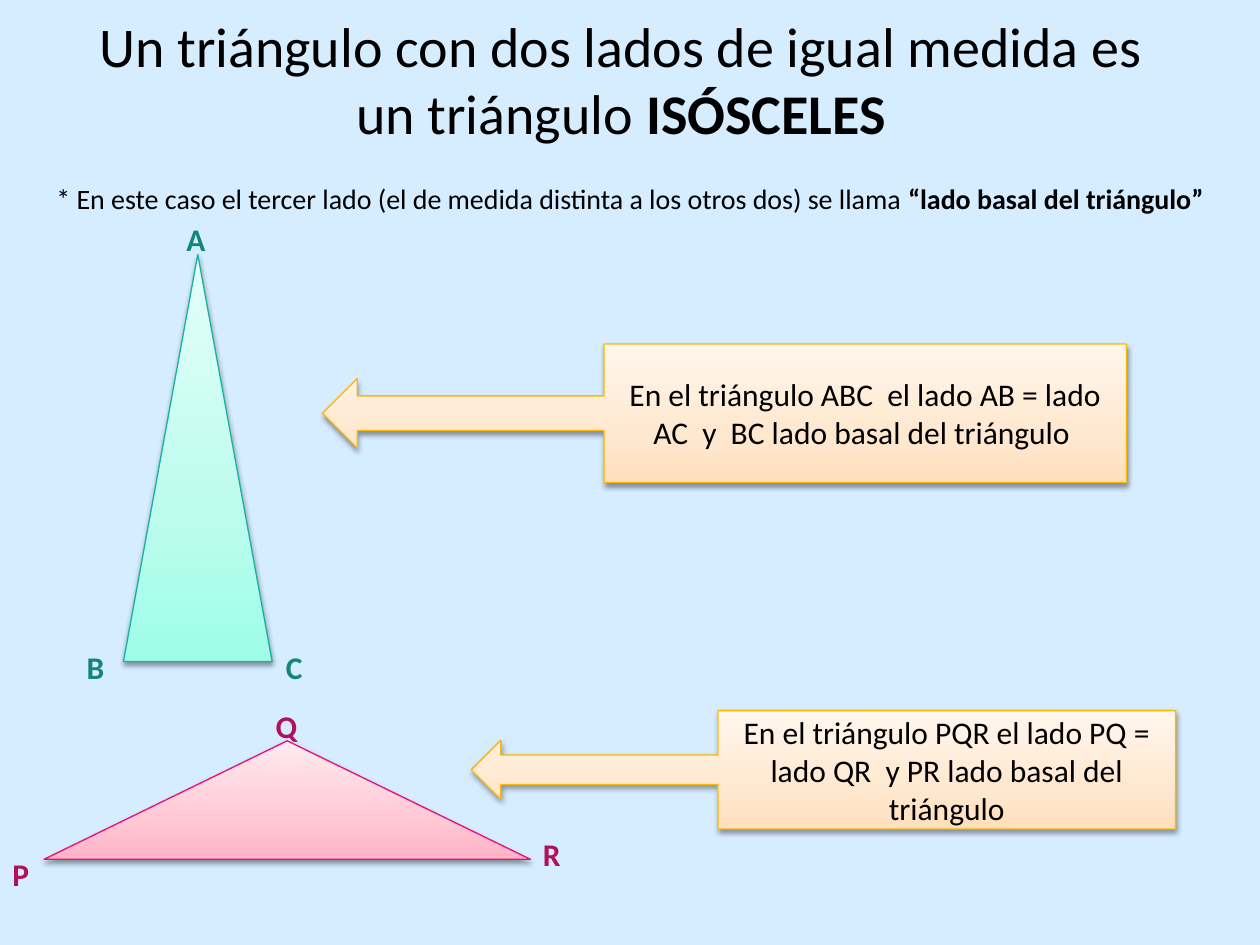
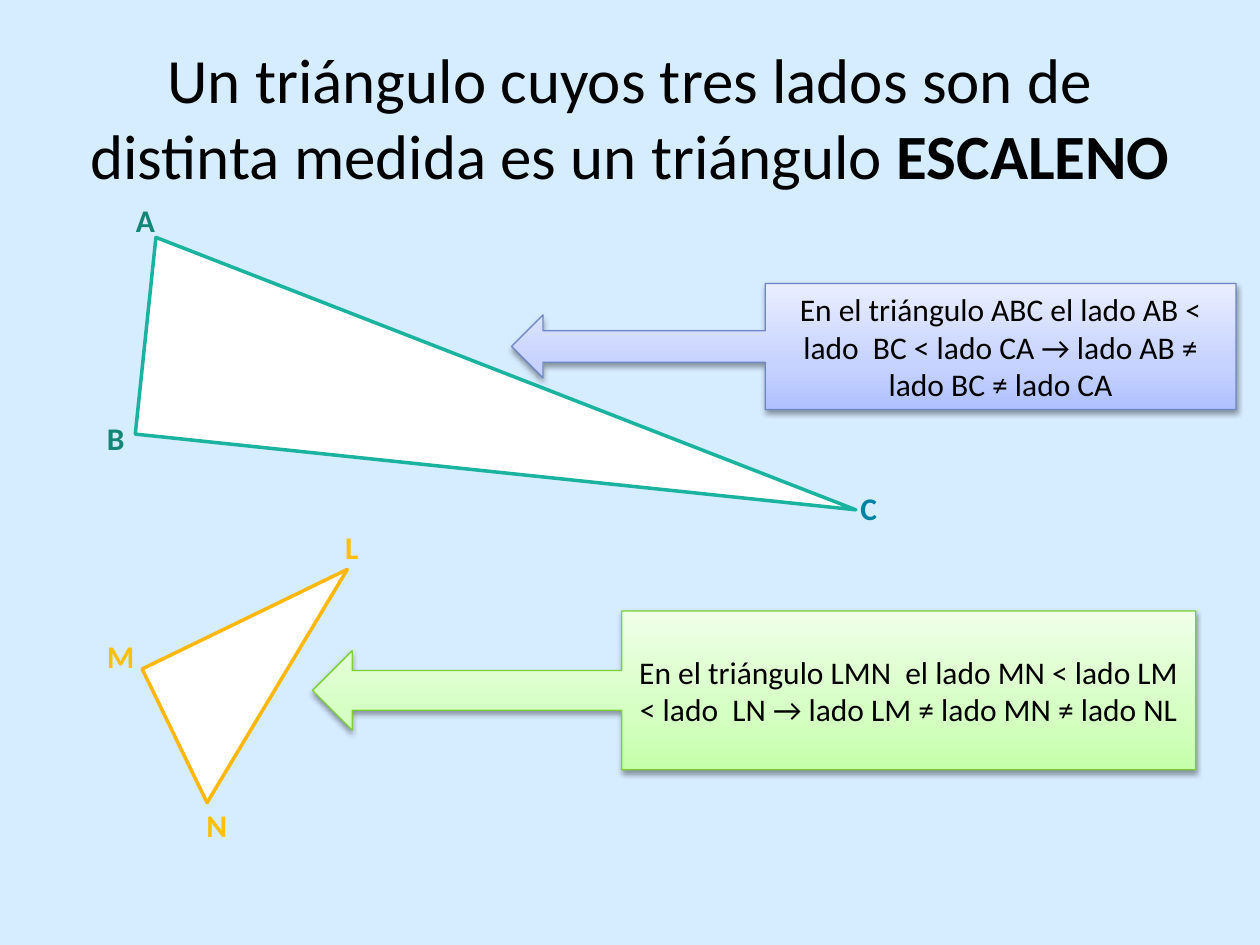
import pptx
import pptx.util
import pptx.dml.color
import pptx.enum.shapes
import pptx.enum.text
import pptx.oxml.ns
from lxml import etree

Inches = pptx.util.Inches
Pt = pptx.util.Pt
Kind = pptx.enum.shapes.MSO_SHAPE
Align = pptx.enum.text.PP_ALIGN
Anchor = pptx.enum.text.MSO_ANCHOR
qn = pptx.oxml.ns.qn


class Theme:
    font = "Calibri"
    back, ink, white = "D6ECFF", "000000", "FFFFFF"
    teal, wine, blue, gold = "138677", "B0105C", "0082A5", "FFC000"
    note, body = 16, 18
    thin, thick = 0.75, 2
    stops = (0, 35, 100)
    mint = ("16B39E", ("9DFDE8", "BBFCED", "E4FFF9"))
    pink = ("EA0F77", ("FFB3C6", "FFC9D6", "FFEBEF"))
    peach = ("FEB604", ("FFDFBC", "FFE8D0", "FFF6ED"))
    sky = ("6E86C6", ("B0C1FF", "C6D2FF", "E9EEFF"))
    lime = ("7CD036", ("C4FFAA", "D5FFC3", "EFFFE8"))


SLIDES = [
    {
        "title": ((0.43, 0, 9, 1.25), 32,
                  "Un triángulo con dos lados de igual medida es un triángulo ", "ISÓSCELES"),
        "note": ((0.35, 1.39, 9.37, 0.43),
                 "* En este caso el tercer lado (el de medida distinta a los otros dos) se llama ",
                 "“lado basal del triángulo”"),
        "tinted": [
            ((0.98, 2.02, 1.18, 3.23), Theme.mint),
            ((0.35, 5.88, 3.86, 0.94), Theme.pink),
        ],
        "plain": [],
        "labels": [
            ("A", 1.38, 1.7, Theme.teal), ("B", 0.59, 5.09, Theme.teal),
            ("C", 2.17, 5.09, Theme.teal), ("P", 0, 6.74, Theme.wine),
            ("Q", 2.09, 5.56, Theme.wine), ("R", 4.21, 6.58, Theme.wine),
        ],
        "calls": [
            ((2.56, 2.73, 6.38, 1.1), Theme.peach,
             "En el triángulo ABC  el lado AB = lado AC  y  BC lado basal del triángulo "),
            ((3.74, 5.64, 5.59, 0.94), Theme.peach,
             "En el triángulo PQR el lado PQ = lado QR  y PR lado basal del triángulo"),
        ],
    },
    {
        "title": ((0.5, 0.3, 9, 1.25), 36,
                  "Un triángulo cuyos tres lados son de distinta medida es un triángulo ", "ESCALENO"),
        "note": None,
        "tinted": [],
        "plain": [
            ((1.14, 2.18, 5.75, 1.57), 6, "1AB39F"),
            ((1.61, 4.54, 1.18, 1.81), 64.1, "FEB80A"),
        ],
        "labels": [
            ("A", 0.98, 1.55, Theme.teal), ("B", 0.75, 3.28, Theme.teal),
            ("C", 6.73, 3.83, Theme.blue), ("L", 2.64, 4.14, Theme.gold),
            ("M", 0.75, 5.01, Theme.gold), ("N", 1.54, 6.35, Theme.gold),
        ],
        "calls": [
            ((4.06, 2.25, 5.75, 1), Theme.sky,
             "En el triángulo ABC el lado AB < lado  BC < lado CA → lado AB ≠ lado BC ≠ lado CA"),
            ((2.48, 4.85, 7.01, 1.26), Theme.lime,
             "En el triángulo LMN  el lado MN < lado LM < lado  LN → lado LM ≠ lado MN ≠ lado NL"),
        ],
    },
]
WIDTHS = {"A": 0.35, "L": 0.24, "M": 0.42, "N": 0.36, "Q": 0.37}


def rgb(hue):
    return pptx.dml.color.RGBColor.from_string(hue)


def style(run, size, hue=Theme.ink, bold=False):
    run.font.name = Theme.font
    run.font.size = Pt(size)
    run.font.bold = bold
    run.font.color.rgb = rgb(hue)


def write(slide, box, size, text, strong):
    frame = slide.shapes.add_textbox(*map(Inches, box)).text_frame
    frame.word_wrap = True
    para = frame.paragraphs[0]
    para.text = text
    style(para.runs[0], size)
    run = para.add_run()
    run.text = strong
    style(run, size, bold=True)
    return frame


def draw(slide, kind, box, line, width):
    shape = slide.shapes.add_shape(kind, *map(Inches, box))
    shape.shadow.inherit = False
    shape.line.color.rgb = rgb(line)
    shape.line.width = Pt(width)
    return shape


def tint(slide, kind, box, look):
    line, hues = look
    shape = draw(slide, kind, box, line, Theme.thin)
    shape.fill.gradient()
    shape.fill.gradient_angle = 90
    props = shape.element.spPr
    stops = props.find(".//" + qn("a:gsLst"))
    for old in list(stops):
        stops.remove(old)
    for place, hue in zip(Theme.stops, hues):
        stop = etree.SubElement(stops, qn("a:gs"), pos=str(place * 1000))
        etree.SubElement(stop, qn("a:srgbClr"), val=hue)
    shade = etree.SubElement(props.find(qn("a:effectLst")), qn("a:outerShdw"),
                             blurRad=str(Pt(3.1)), dist=str(Pt(1.6)),
                             dir="5400000", rotWithShape="0")
    color = etree.SubElement(shade, qn("a:srgbClr"), val=Theme.ink)
    etree.SubElement(color, qn("a:alpha"), val="38000")
    return shape


def label(slide, text, left, top, hue):
    box = (left, top, WIDTHS.get(text, 0.34), 0.4)
    frame = slide.shapes.add_textbox(*map(Inches, box)).text_frame
    frame.word_wrap = False
    frame.auto_size = pptx.enum.text.MSO_AUTO_SIZE.SHAPE_TO_FIT_TEXT
    frame.text = text
    style(frame.paragraphs[0].runs[0], Theme.body, hue, True)


def call(slide, box, look, text):
    frame = tint(slide, Kind.LEFT_ARROW_CALLOUT, box, look).text_frame
    frame.word_wrap = True
    frame.vertical_anchor = Anchor.MIDDLE
    frame.text = text
    para = frame.paragraphs[0]
    para.alignment = Align.CENTER
    style(para.runs[0], Theme.body)


def build(deck, data):
    slide = deck.slides.add_slide(deck.slide_layouts[6])
    slide.background.fill.solid()
    slide.background.fill.fore_color.rgb = rgb(Theme.back)
    title = write(slide, *data["title"])
    title.vertical_anchor = Anchor.MIDDLE
    title.paragraphs[0].alignment = Align.CENTER
    if data["note"]:
        box, text, strong = data["note"]
        write(slide, box, Theme.note, text, strong)
    for box, look in data["tinted"]:
        tint(slide, Kind.ISOSCELES_TRIANGLE, box, look)
    for box, turn, line in data["plain"]:
        shape = draw(slide, Kind.RIGHT_TRIANGLE, box, line, Theme.thick)
        shape.fill.solid()
        shape.fill.fore_color.rgb = rgb(Theme.white)
        shape.rotation = turn
    for item in data["labels"]:
        label(slide, *item)
    for item in data["calls"]:
        call(slide, *item)


def main():
    deck = pptx.Presentation()
    deck.slide_width = Inches(10)
    deck.slide_height = Inches(7.5)
    for data in SLIDES:
        build(deck, data)
    deck.save("out.pptx")


if __name__ == "__main__":
    main()
